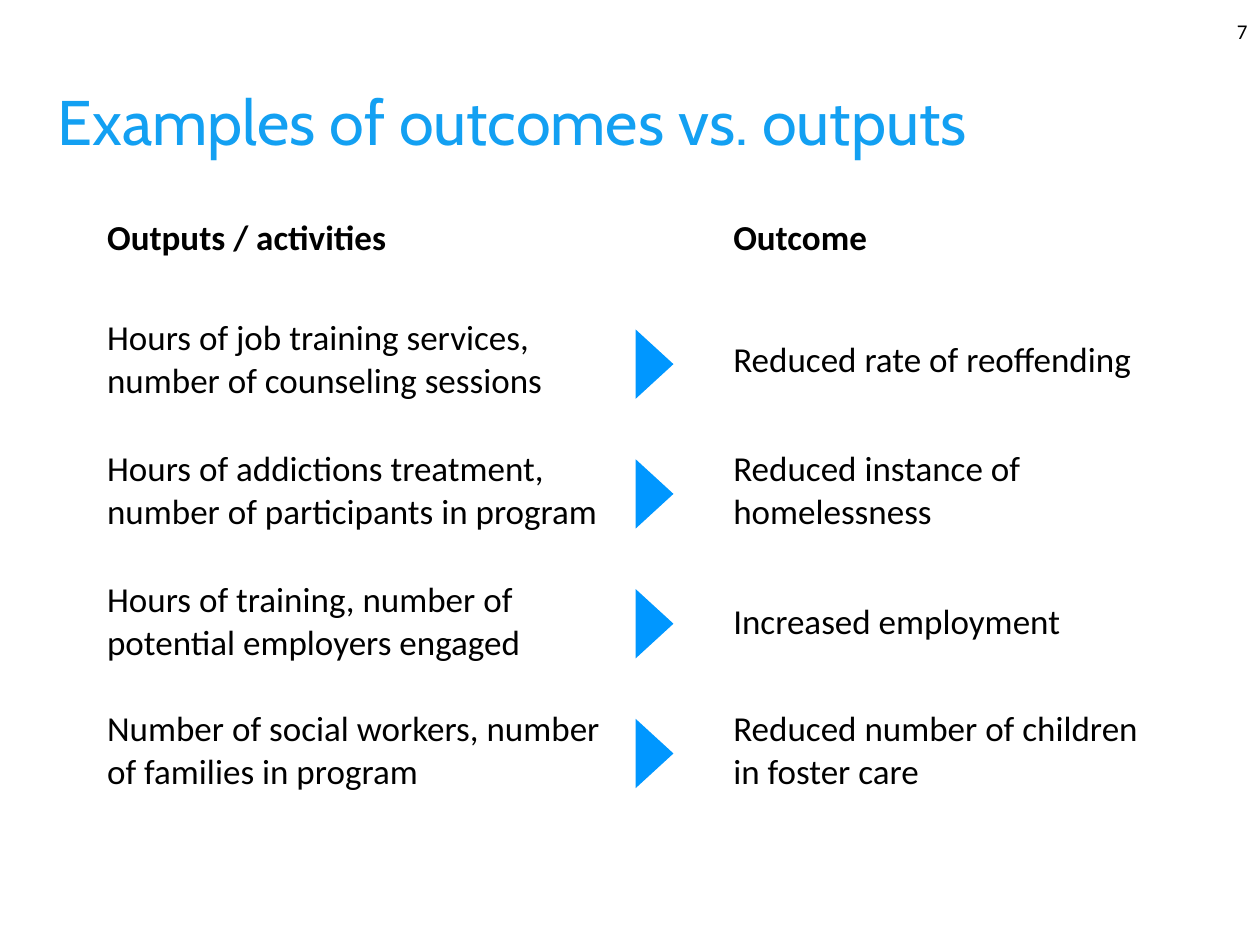
import dataclasses
import typing

import pptx
import pptx.dml.color
import pptx.enum.shapes
import pptx.enum.text
import pptx.util

Inches = pptx.util.Inches
Align = pptx.enum.text.PP_ALIGN
Anchor = pptx.enum.text.MSO_ANCHOR


@dataclasses.dataclass(frozen=True)
class Style:
    font: str
    size: int
    color: str
    bold: bool = False


@dataclasses.dataclass(frozen=True)
class Theme:
    title: Style = Style("Cabin", 36, "13A0F2")
    head: Style = Style("Calibri", 20, "000000", True)
    body: Style = Style("Calibri", 20, "000000")
    page: Style = Style("Calibri", 12, "000000")
    arrow: str = "0097FF"


class Box(typing.NamedTuple):
    left: float
    top: float
    width: float
    height: float

    def spans(self) -> list[int]:
        return [Inches(side) for side in self]


class Pair(typing.NamedTuple):
    output: str
    outcome: str


THEME = Theme()
HEAD = Pair("Outputs / activities", "Outcome")
PAIRS = [
    Pair("Hours of job training services, number of counseling sessions",
         "Reduced rate of reoffending"),
    Pair("Hours of addictions treatment, number of participants in program",
         "Reduced instance of homelessness"),
    Pair("Hours of training, number of potential employers engaged",
         "Increased employment"),
    Pair("Number of social workers, number of families in program",
         "Reduced number of children in foster care"),
]
GRID = Box(0.75, 1.67, 8.43, 4.8)
COLS = [4.14, 0.83, 3.46]
ROWS = [0.68, 1.02, 1.06, 1.02, 1.02]
ARROW = Box(4.92, 2.74, 0.55, 0.3)
STEP = 1.03


def rgb(code: str) -> pptx.dml.color.RGBColor:
    return pptx.dml.color.RGBColor.from_string(code)


def write(frame, text: str, style: Style, align=Align.LEFT) -> None:
    para = frame.paragraphs[0]
    para.text = text
    para.alignment = align
    font = para.font
    font.name, font.size, font.bold = style.font, pptx.util.Pt(style.size), style.bold
    font.color.rgb = rgb(style.color)


def add_text(slide, box: Box, text: str, style: Style, align=Align.LEFT) -> None:
    frame = slide.shapes.add_textbox(*box.spans()).text_frame
    frame.word_wrap = True
    frame.vertical_anchor = Anchor.MIDDLE
    write(frame, text, style, align)


def add_grid(slide) -> None:
    """Add the table, with an empty middle column for the arrows."""
    table = slide.shapes.add_table(len(ROWS), len(COLS), *GRID.spans()).table
    table.first_row = table.horz_banding = False
    for col, width in zip(table.columns, COLS):
        col.width = Inches(width)
    for row, height in zip(table.rows, ROWS):
        row.height = Inches(height)
    for cell in table.iter_cells():
        cell.fill.background()
    for index, pair in enumerate([HEAD, *PAIRS]):
        for col, text in zip((0, 2), pair):
            cell = table.cell(index, col)
            cell.vertical_anchor = Anchor.MIDDLE if index else Anchor.TOP
            write(cell.text_frame, text, THEME.body if index else THEME.head)


def add_arrow(slide, box: Box) -> None:
    kind = pptx.enum.shapes.MSO_SHAPE.ISOSCELES_TRIANGLE
    arrow = slide.shapes.add_shape(kind, *box.spans())
    arrow.rotation = 90
    arrow.shadow.inherit = False
    arrow.fill.solid()
    arrow.fill.fore_color.rgb = rgb(THEME.arrow)
    arrow.line.fill.background()


def main() -> None:
    deck = pptx.Presentation()
    deck.slide_width, deck.slide_height = Inches(10), Inches(7.5)
    slide = deck.slides.add_slide(deck.slide_layouts[6])
    add_grid(slide)
    for index in range(len(PAIRS)):
        add_arrow(slide, ARROW._replace(top=ARROW.top + index * STEP))
    add_text(slide, Box(0.36, 0.59, 8.51, 0.73),
             "Examples of outcomes vs. outputs", THEME.title)
    add_text(slide, Box(9.56, 0.05, 0.44, 0.4), "7", THEME.page, Align.RIGHT)
    deck.save("out.pptx")


if __name__ == "__main__":
    main()
